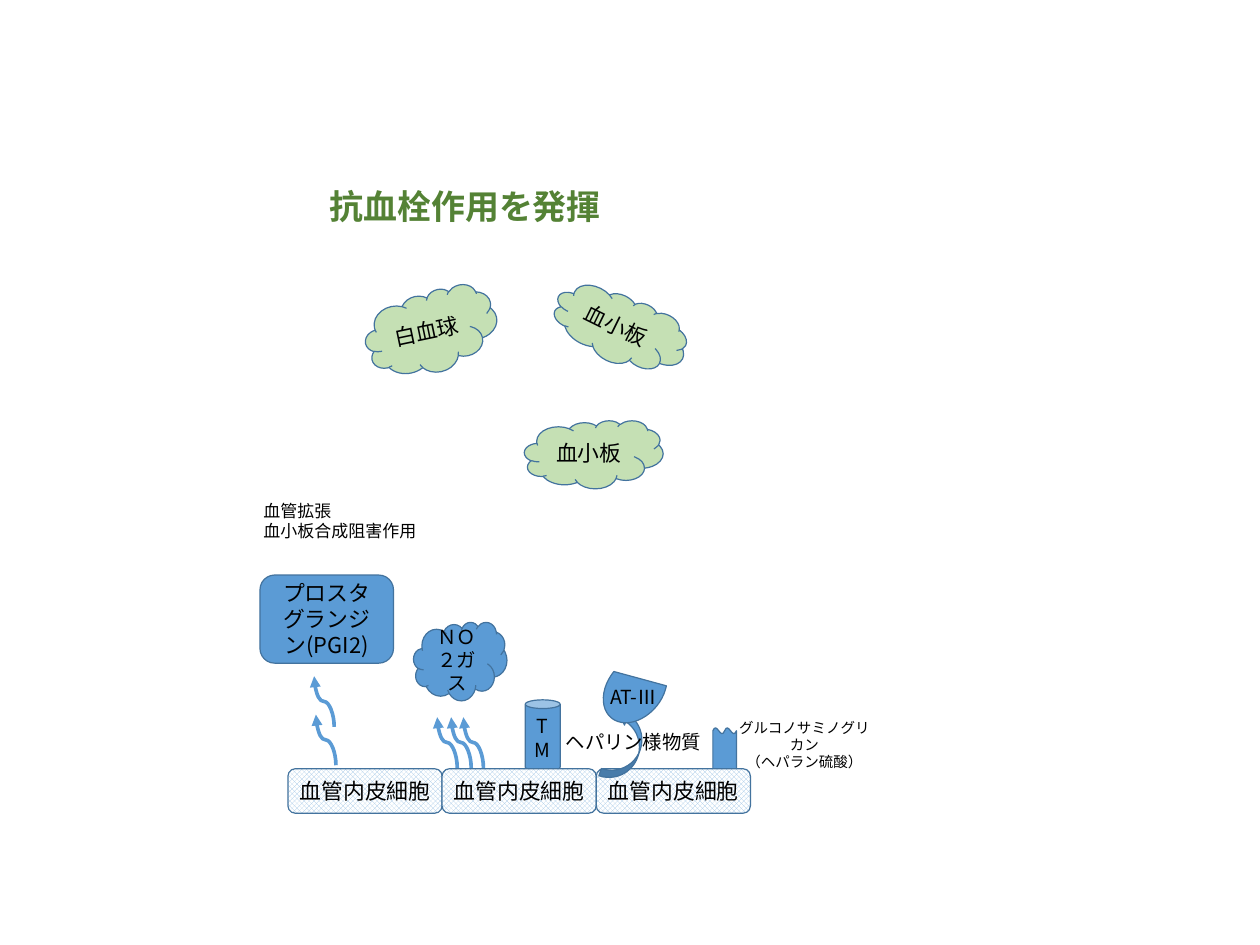
import pptx
import pptx.util
import pptx.dml.color
import pptx.enum.dml
import pptx.enum.shapes
import pptx.enum.text
import pptx.oxml.ns
from lxml import etree

Inches = pptx.util.Inches
Pt = pptx.util.Pt
SHAPE = pptx.enum.shapes.MSO_SHAPE
ALIGN = pptx.enum.text.PP_ALIGN
qn = pptx.oxml.ns.qn

FONT = "Noto Sans CJK JP"
BLUE, OUTLINE, GREEN = "5B9BD5", "43739E", "C5E0B4"


def rgb(color):
    return pptx.dml.color.RGBColor.from_string(color)


def set_text(sp, text, size, color="000000", align=ALIGN.CENTER, bold=False):
    tf = sp.text_frame
    tf.text = text
    tf.word_wrap = True
    tf.vertical_anchor = pptx.enum.text.MSO_ANCHOR.MIDDLE
    for p in tf.paragraphs:
        p.alignment = align
        for r in p.runs:
            r.font.size = Pt(size)
            r.font.bold = bold
            r.font.name = FONT
            r.font.color.rgb = rgb(color)
            etree.SubElement(r.font._element, qn("a:ea"), typeface=FONT)


def add_part(s, kind, box, fill=BLUE, text="", size=18, rotation=0, align=ALIGN.CENTER):
    """Add a preset shape; without a fill it is a plain label."""
    sp = s.shapes.add_shape(kind, *map(Inches, box))
    sp.shadow.inherit = False
    sp.rotation = rotation
    if fill:
        sp.fill.solid()
        sp.fill.fore_color.rgb = rgb(fill)
        sp.line.color.rgb = rgb(OUTLINE)
        sp.line.width = Pt(1)
    else:
        sp.fill.background()
        sp.line.fill.background()
    if text:
        set_text(sp, text, size, align=align)
    return sp


def add_label(s, box, text, size, align=ALIGN.CENTER):
    return add_part(s, SHAPE.ROUNDED_RECTANGLE, box, None, text, size, align=align)


def add_rising_arrow(s, x, y):
    """Curved arrow rising from (x, y), turned a quarter so it starts upwards."""
    rise, shift = 0.58, 0.23
    left, top = x - (shift + rise) / 2, y - (rise + shift) / 2
    c = s.shapes.add_connector(
        pptx.enum.shapes.MSO_CONNECTOR.CURVE,
        Inches(left), Inches(top + shift), Inches(left + rise), Inches(top))
    c.line.color.rgb = rgb(BLUE)
    c.line.width = Pt(3)
    spPr = c._element.spPr
    spPr.find(qn("a:xfrm")).set("rot", "16200000")
    etree.SubElement(spPr.find(qn("a:ln")), qn("a:tailEnd"), type="triangle")
    etree.SubElement(spPr, qn("a:effectLst"))


def draw_title(s, x, y, w, h):
    tb = s.shapes.add_textbox(*map(Inches, (x, y, w, h)))
    set_text(tb, "抗血栓作用を発揮", 28, "548235", ALIGN.LEFT, True)
    tb.text_frame.paragraphs[0].line_spacing = 0.9


def draw_clouds(s, x, y):
    clouds = [
        ("血小板", 1.83, 1.48, 1.59, 0.78, 0),
        ("白血球", 0, 0, 1.53, 0.93, 348.1),
        ("血小板", 2.13, 0.04, 1.59, 0.78, 26.2),
    ]
    for name, dx, dy, w, h, angle in clouds:
        add_part(s, SHAPE.CLOUD, (x + dx, y + dy, w, h), GREEN, name, rotation=angle)


def draw_cell_row(s, x, y, w, h, count=3):
    cell_w = w / count
    for i in range(count):
        sp = add_part(s, SHAPE.ROUNDED_RECTANGLE, (x + i * cell_w, y, cell_w, h),
                      text="血管内皮細胞")
        sp.fill.patterned()
        sp.fill.pattern = pptx.enum.dml.MSO_PATTERN.LARGE_CHECKER_BOARD
        sp.fill.fore_color.rgb = rgb("9DC3E6")
        sp.fill.back_color.rgb = rgb("FFFFFF")


def draw_standing_parts(s, x, y):
    # Wave with its label, and can
    add_label(s, (x + 2.27, y + 0.2, 1.86, 0.63), "グルコノサミノグリカン\n（ヘパラン硫酸）", 12)
    add_part(s, SHAPE.DOUBLE_WAVE, (x + 2.15, y + 0.32, 0.27, 0.55))
    add_part(s, SHAPE.CAN, (x, y, 0.4, 0.82), text="TM", size=16)


def draw_left_group(s, x, y):
    # Rising arrows
    for dx, dy in [(0.96, 3.12), (0.94, 2.68), (2.65, 3.15), (2.51, 3.15), (2.35, 3.15)]:
        add_rising_arrow(s, x + dx, y + dy)
    # Cloud, box and text above
    add_part(s, SHAPE.CLOUD, (x + 1.85, y + 1.48, 1.07, 0.9), text="ＮＯ２ガス", size=16)
    add_part(s, SHAPE.ROUNDED_RECTANGLE, (x + 0.09, y + 0.94, 1.53, 1.01),
             text="プロスタグランジン(PGI2)")
    add_label(s, (x, y, 2.8, 0.63), "血管拡張\n血小板合成阻害作用", 14, ALIGN.LEFT)


def draw_chord_group(s, x, y):
    # Curved arrow and chord with their labels
    add_part(s, SHAPE.CURVED_UP_ARROW, (x + 0.42, y + 0.8, 0.83, 0.35), rotation=289.1)
    add_label(s, (x, y + 0.61, 1.86, 0.63), "ヘパリン様物質", 16)
    add_part(s, SHAPE.CHORD, (x + 0.52, y, 0.86, 0.63), rotation=309.3)
    add_label(s, (x + 0.33, y + 0.22, 1.2, 0.37), "AT-Ⅲ", 16)


def main():
    prs = pptx.Presentation()
    prs.slide_width, prs.slide_height = Inches(14.44), Inches(10.83)
    s = prs.slides.add_slide(prs.slide_layouts[6])
    draw_standing_parts(s, 6.02, 8.02)
    draw_cell_row(s, 3.3, 8.81, 5.3, 0.51)
    draw_left_group(s, 2.89, 5.65)
    draw_chord_group(s, 6.33, 7.58)
    draw_clouds(s, 4.18, 3.34)
    draw_title(s, 3.68, 1.88, 3.4, 1.01)
    prs.save("out.pptx")


if __name__ == "__main__":
    main()
